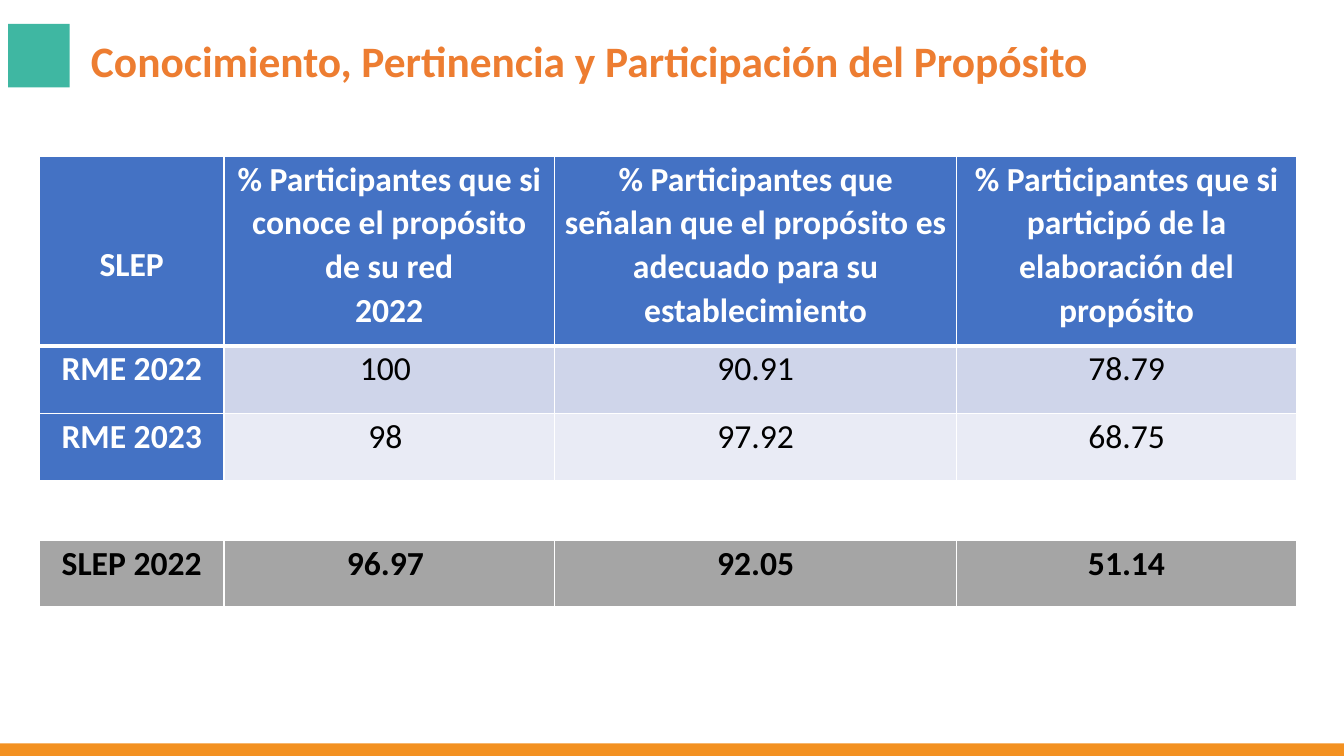
import pptx
import pptx.util
import pptx.dml.color
import pptx.enum.shapes
import pptx.enum.text
import lxml.etree
from dataclasses import dataclass

Pt = pptx.util.Pt
RGB = pptx.dml.color.RGBColor.from_string
ALIGN = pptx.enum.text.PP_ALIGN
ANCHOR = pptx.enum.text.MSO_ANCHOR


@dataclass(frozen=True)
class Theme:
    font: str = "Calibri"
    title_size: float = 31
    cell_size: float = 24
    line_spacing: float = 1.07
    title: str = "ED7D31"
    teal: str = "3FB7A2"
    orange: str = "F39121"
    blue: str = "4472C4"
    band_dark: str = "CFD5EA"
    band_light: str = "E9EBF5"
    grey: str = "A5A5A5"
    white: str = "FFFFFF"
    black: str = "000000"


T = Theme()
COL_WIDTHS = (131.76, 236.16, 287.28, 242.64)
HEADERS = (
    "SLEP",
    "% Participantes que si conoce el propósito de su red\n2022",
    "% Participantes que señalan que el propósito es adecuado para su establecimiento",
    "% Participantes que si participó de la elaboración del propósito",
)
RME_ROWS = (
    ("RME 2022", "100 ", "90.91", "78.79"),
    ("RME 2023", "98 ", "97.92", "68.75"),
)
SLEP_ROW = ("SLEP 2022", "96.97 ", "92.05", "51.14")


def add_run(p, text, size, color, bold):
    r = p.add_run()
    r.text = text
    r.font.name = T.font
    r.font.size = Pt(size)
    r.font.bold = bold
    r.font.color.rgb = RGB(color)


def add_bar(s, x, y, w, h, color):
    sp = s.shapes.add_shape(pptx.enum.shapes.MSO_SHAPE.RECTANGLE, Pt(x), Pt(y), Pt(w), Pt(h))
    sp.shadow.inherit = False
    sp.fill.solid()
    sp.fill.fore_color.rgb = RGB(color)
    sp.line.fill.background()


def add_header(s, x, y, w, h):
    # Teal square, then the title to its right
    add_bar(s, x, y, 44, 45.5, T.teal)
    sp = s.shapes.title
    sp.left, sp.top, sp.width, sp.height = Pt(x + 52), Pt(y), Pt(w - 52), Pt(h)
    tf = sp.text_frame
    tf.word_wrap = True
    tf.auto_size = pptx.enum.text.MSO_AUTO_SIZE.NONE
    tf.vertical_anchor = ANCHOR.TOP
    tf.margin_left = tf.margin_right = tf.margin_top = tf.margin_bottom = Pt(7.2)
    p = tf.paragraphs[0]
    p.alignment = ALIGN.LEFT
    add_run(p, "Conocimiento, Pertinencia y Participación del Propósito", T.title_size, T.title, True)


def set_borders(cell, top, bottom):
    tcPr = cell._tc.get_or_add_tcPr()
    for i, (side, width) in enumerate((("L", 1), ("R", 1), ("T", top), ("B", bottom))):
        ln = pptx.oxml.parse_xml(
            '<a:ln%s xmlns:a="http://schemas.openxmlformats.org/drawingml/2006/main" w="%d">'
            '<a:solidFill><a:srgbClr val="%s"/></a:solidFill></a:ln%s>'
            % (side, Pt(width), T.white, side))
        tcPr.insert(i, ln)


def fill_cell(cell, text, fill, color, bold, top=1, bottom=1):
    cell.fill.solid()
    cell.fill.fore_color.rgb = RGB(fill)
    cell.margin_left = cell.margin_right = Pt(5)
    cell.margin_top = cell.margin_bottom = 0
    cell.vertical_anchor = ANCHOR.TOP
    tf = cell.text_frame
    for i, line in enumerate(text.split("\n")):
        p = tf.add_paragraph() if i else tf.paragraphs[0]
        p.alignment = ALIGN.CENTER
        p.line_spacing = T.line_spacing
        add_run(p, line, T.cell_size, color, bold)
    set_borders(cell, top, bottom)


def new_table(s, x, y, heights):
    gf = s.shapes.add_table(len(heights), len(COL_WIDTHS), Pt(x), Pt(y),
                            Pt(sum(COL_WIDTHS)), Pt(sum(heights)))
    table = gf.table
    for col, width in zip(table.columns, COL_WIDTHS):
        col.width = Pt(width)
    for row, height in zip(table.rows, heights):
        row.height = Pt(height)
    return table


def add_rme_table(s, x, y, row_h):
    table = new_table(s, x, y, (135.4, row_h, row_h))
    for c, text in enumerate(HEADERS):
        fill_cell(table.cell(0, c), text, T.blue, T.white, True, bottom=3)
    table.cell(0, 0).margin_top = Pt(61)
    for r, (values, band) in enumerate(zip(RME_ROWS, (T.band_dark, T.band_light)), 1):
        for c, text in enumerate(values):
            first = c == 0
            fill_cell(table.cell(r, c), text, T.blue if first else band,
                      T.white if first else T.black, first, top=3 if r == 1 else 1)


def add_slep_table(s, x, y, row_h):
    table = new_table(s, x, y, (row_h,))
    for c, text in enumerate(SLEP_ROW):
        fill_cell(table.cell(0, c), text, T.grey, T.black, True, bottom=3)


def main():
    prs = pptx.Presentation()
    prs.slide_width, prs.slide_height = Pt(960), Pt(540)
    s = prs.slides.add_slide(prs.slide_layouts[5])
    add_header(s, 5.8, 17, 811.6, 52)
    # Results by year, then the reference row
    add_rme_table(s, 28.2, 111.6, 48.2)
    add_slep_table(s, 28.2, 386, 48.2)
    # Footer band
    add_bar(s, 0, 531, 960, 9, T.orange)
    prs.save("out.pptx")


if __name__ == "__main__":
    main()
